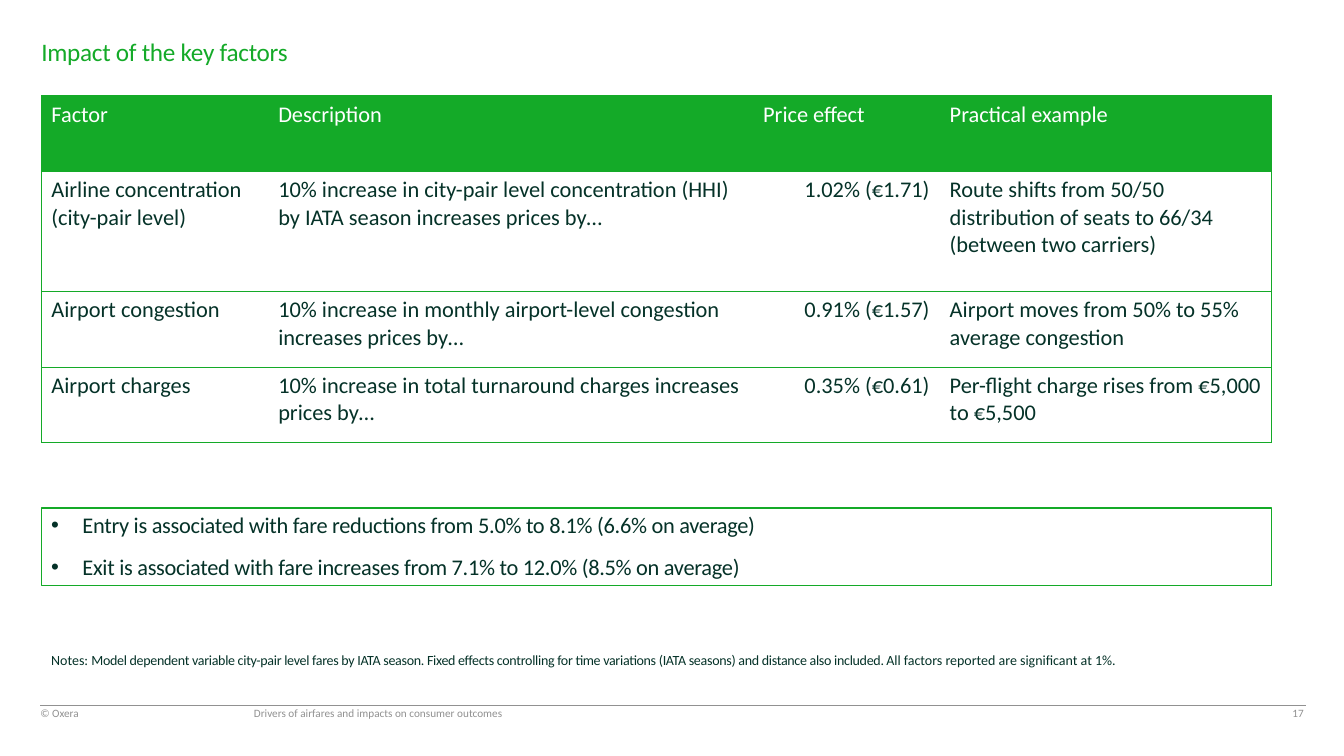
from lxml import etree
from pptx import Presentation
from pptx.dml.color import RGBColor
from pptx.enum.shapes import MSO_CONNECTOR, MSO_SHAPE
from pptx.enum.text import MSO_ANCHOR, PP_ALIGN
from pptx.oxml.ns import qn
from pptx.util import Inches, Pt

LEFT, RIGHT = PP_ALIGN.LEFT, PP_ALIGN.RIGHT
TOP, BOTTOM = MSO_ANCHOR.TOP, MSO_ANCHOR.BOTTOM
RECTANGLE, STRAIGHT = MSO_SHAPE.RECTANGLE, MSO_CONNECTOR.STRAIGHT

COLORS = {"green": "14AA28", "dark": "053228", "grey": "919191", "white": "FFFFFF"}
MARGIN, WIDTH = 0.41, 12.2

COLUMNS = [2.25, 4.81, 1.85, 3.29]
ROW_HEIGHTS = [0.75, 1.19, 0.75, 0.75]
FACTORS = [
    ["Factor", "Description", "Price effect", "Practical example"],
    ["Airline concentration (city-pair level)",
     "10% increase in city-pair level concentration (HHI) by IATA season increases prices by…",
     "1.02% (€1.71)",
     "Route shifts from 50/50 distribution of seats to 66/34 (between two carriers)"],
    ["Airport congestion",
     "10% increase in monthly airport-level congestion increases prices by…",
     "0.91% (€1.57)",
     "Airport moves from 50% to 55% average congestion"],
    ["Airport charges",
     "10% increase in total turnaround charges increases prices by…",
     "0.35% (€0.61)",
     "Per-flight charge rises from €5,000 to €5,500"],
]
ENTRY_EXIT = [
    "Entry is associated with fare reductions from 5.0% to 8.1% (6.6% on average)",
    "Exit is associated with fare increases from 7.1% to 12.0% (8.5% on average)",
]
NOTES = [
    ("Notes: ", 0),
    ("Model dependent variable city-pair level fares by IATA season. Fixed effects controlling "
     "for time variations (IATA seasons) and distance also included. ", -20),
    ("All factors reported are significant at 1%.", 0),
]


def rgb(name):
    return RGBColor.from_string(COLORS[name])


class SlideBuilder:
    def __init__(self, slide, font="Calibri"):
        self.s = slide
        self.font = font

    def style(self, r, size, color, spacing=0):
        """Format a run; spacing is in hundredths of a point."""
        r.font.name, r.font.size = self.font, Pt(size)
        r.font.bold = False
        r.font.color.rgb = rgb(color)
        if spacing:
            r.font._element.set("spc", str(spacing))

    def frame(self, tf, anchor=TOP, insets=(0.1, 0.05, 0.1, 0.05)):
        tf.word_wrap, tf.vertical_anchor = True, anchor
        tf.margin_left, tf.margin_top, tf.margin_right, tf.margin_bottom = map(Inches, insets)

    def title(self, text, box):
        sp = self.s.shapes.title
        sp.left, sp.top, sp.width, sp.height = map(Inches, box)
        tf = sp.text_frame
        tf.text = text
        self.frame(tf, insets=(0, 0.05, 0.1, 0))
        p = tf.paragraphs[0]
        p.alignment, p.line_spacing = LEFT, Pt(24)
        self.style(p.runs[0], 18, "green", -20)

    def text(self, parts, box, size, color, leading, anchor=TOP, align=LEFT, inset=0.1):
        """Add one paragraph built from (text, letter spacing) parts."""
        tf = self.s.shapes.add_textbox(*map(Inches, box)).text_frame
        self.frame(tf, anchor, (inset, 0.05, 0.1, 0.05))
        p = tf.paragraphs[0]
        p.alignment, p.line_spacing = align, Pt(leading)
        for text, spacing in parts:
            r = p.add_run()
            r.text = text
            self.style(r, size, color, spacing)

    def footer(self, text, box, **options):
        self.text([(text, 0)], box, 8, "grey", 10, BOTTOM, **options)

    def rule(self, x1, x2, y):
        line = self.s.shapes.add_connector(STRAIGHT, *map(Inches, (x1, y, x2, y)))
        line.line.color.rgb, line.line.width = rgb("grey"), Pt(0.5)
        etree.SubElement(line._element.spPr, qn("a:effectLst"))

    def bullet_box(self, items, box):
        sp = self.s.shapes.add_shape(RECTANGLE, *map(Inches, box))
        sp.shadow.inherit = False
        sp.fill.background()
        sp.line.color.rgb, sp.line.width = rgb("green"), Pt(0.75)
        tf = sp.text_frame
        tf.text = "\n".join(items)
        self.frame(tf)
        for i, p in enumerate(tf.paragraphs):
            p.alignment, p.line_spacing = LEFT, Pt(18)
            p.space_before, p.space_after = Pt(6 if i else 0), Pt(6)
            pPr = p._p.get_or_add_pPr()
            pPr.set("marL", str(Inches(0.31)))
            pPr.set("indent", str(Inches(-0.31)))
            etree.SubElement(pPr, qn("a:buFont"), typeface="Arial")
            etree.SubElement(pPr, qn("a:buChar"), char="•")
            self.style(p.runs[0], 16, "dark", -20)

    def borders(self, cell, first, last):
        """Draw horizontal edges everywhere and vertical edges only at the table's sides."""
        tcPr = cell._tc.get_or_add_tcPr()
        for side, drawn in (("L", first), ("R", last), ("T", True), ("B", True)):
            ln = etree.SubElement(tcPr, qn(f"a:ln{side}"), w=str(Pt(0.5)))
            if drawn:
                fill = etree.SubElement(ln, qn("a:solidFill"))
                etree.SubElement(fill, qn("a:srgbClr"), val=COLORS["green"])
            else:
                etree.SubElement(ln, qn("a:noFill"))

    def table(self, rows, left, top, widths, heights):
        box = map(Inches, (left, top, sum(widths), sum(heights)))
        table = self.s.shapes.add_table(len(rows), len(widths), *box).table
        table.first_row = table.horz_banding = False
        for column, width in zip(table.columns, widths):
            column.width = Inches(width)
        for row, height in zip(table.rows, heights):
            row.height = Inches(height)
        for i, row in enumerate(rows):
            for j, text in enumerate(row):
                cell = table.cell(i, j)
                self.borders(cell, j == 0, j == len(row) - 1)
                cell.fill.solid()
                cell.fill.fore_color.rgb = rgb("white" if i else "green")
                cell.text_frame.text = text
                p = cell.text_frame.paragraphs[0]
                p.alignment = RIGHT if i and j == 2 else LEFT
                self.style(p.runs[0], 16, "dark" if i else "white")


def main():
    prs = Presentation()
    prs.slide_width, prs.slide_height = Inches(13.33), Inches(7.5)
    b = SlideBuilder(prs.slides.add_slide(prs.slide_layouts[5]))

    b.footer("© Oxera", (0.4, 6.9, 0.7, 0.29), inset=0)
    b.rule(0.4, 12.95, 7)
    b.footer("Drivers of airfares and impacts on consumer outcomes", (2.42, 6.96, 5.14, 0.23))
    b.title("Impact of the key factors", (MARGIN, 0.28, 9.35, 0.36))
    b.table(FACTORS, MARGIN, 0.95, COLUMNS, ROW_HEIGHTS)
    b.footer("17", (10.03, 6.9, 3, 0.29), align=RIGHT)
    b.text(NOTES, (MARGIN, 6.33, WIDTH, 0.57), 10, "dark", 18)
    b.bullet_box(ENTRY_EXIT, (MARGIN, 5.04, WIDTH, 0.77))

    prs.save("out.pptx")


if __name__ == "__main__":
    main()
